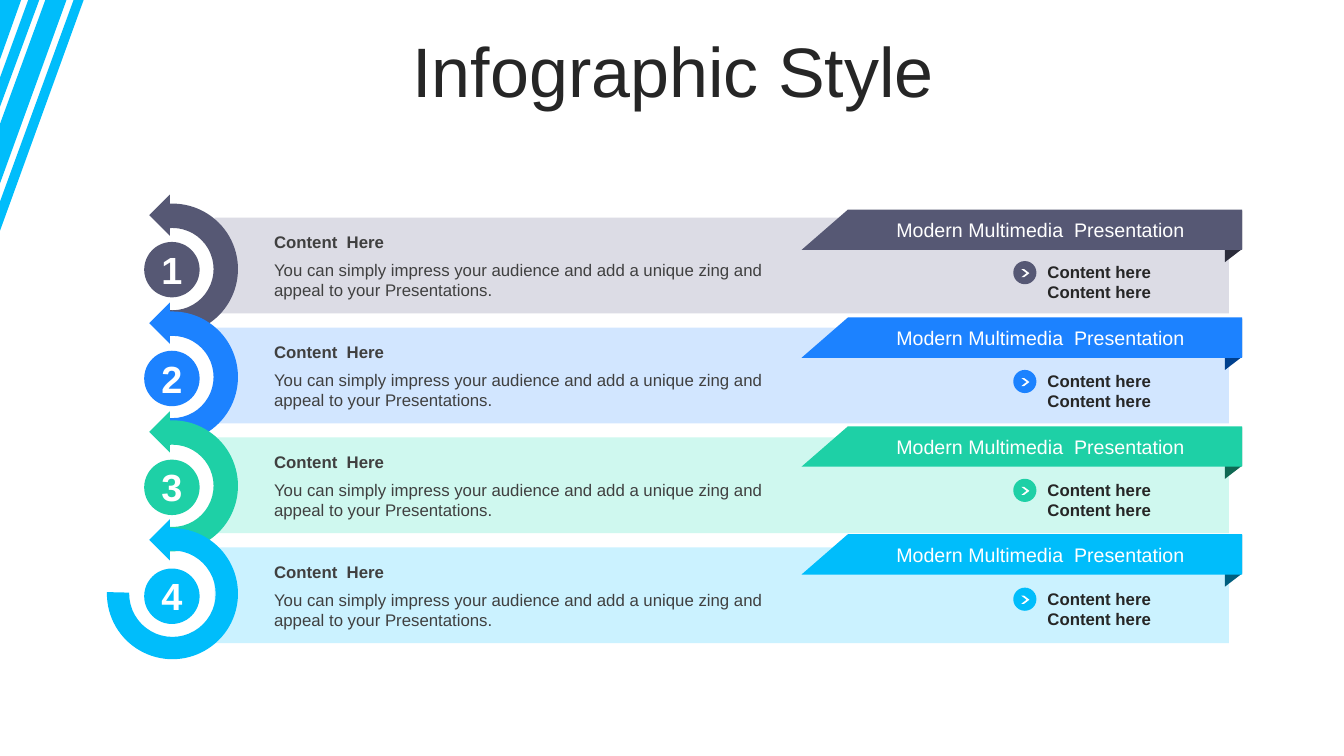
from pptx import Presentation
from pptx.dml.color import RGBColor
from pptx.enum.shapes import MSO_SHAPE
from pptx.enum.text import MSO_ANCHOR, MSO_AUTO_SIZE, PP_ALIGN
from pptx.util import Pt

PX = 9144  # 100 px to the inch
FONT = "Arial"
RECT, OVAL, ARC = MSO_SHAPE.RECTANGLE, MSO_SHAPE.OVAL, MSO_SHAPE.BLOCK_ARC
TRIANGLE, CHEVRON = MSO_SHAPE.RIGHT_TRIANGLE, MSO_SHAPE.CHEVRON
TOP, MIDDLE = MSO_ANCHOR.TOP, MSO_ANCHOR.MIDDLE
LEFT, CENTER = PP_ALIGN.LEFT, PP_ALIGN.CENTER

WHITE, INK, GREY, ACCENT = "FFFFFF", "262626", "404040", "00BDFB"
TITLE = "Infographic Style"
HEADING = "Content  Here"
BODY = ("You can simply impress your audience and add a unique zing "
        "and appeal to your Presentations.")
RIBBON = "Modern Multimedia  Presentation"
BULLETS = ["Content here", "Content here"]

# main colour, band colour, ribbon fold colour
ROWS = [
    ("565874", "DCDCE5", "2B2C3A"),
    ("1C82FF", "D2E6FF", "00408E"),
    ("1ED0A6", "CFF8EF", "0F6853"),
    (ACCENT, "CBF2FF", "005E7E"),
]
OPEN_ARC = (104.732, 2.031, 0.186)
LAST_ARC = (104.732, 54.833, 0.17)

# Each layer of a row repeats at its own distance.
BAND_STEP, BADGE_STEP, RIBBON_STEP = 109, 108, 107.4

STRIPES = [
    [(73, 0), (83, 0), (0, 229), (0, 200)],
    [(39, 0), (0, 106), (0, 77), (28, 0)],
    [(66, 0), (0, 182), (0, 123), (45, 0)],
    [(0, 0), (21, 0), (0, 59)],
]


def color(hex_code):
    return RGBColor.from_string(hex_code)


def emu(*lengths):
    return [round(length) * PX for length in lengths]


def paint(shape, fill):
    shape.shadow.inherit = False
    shape.fill.solid()
    shape.fill.fore_color.rgb = color(fill)
    shape.line.fill.background()


def add_preset(slide, kind, box, fill, rotation=0, adjustments=()):
    shape = slide.shapes.add_shape(kind, *emu(*box))
    shape.rotation = rotation
    for index, value in enumerate(adjustments):
        shape.adjustments[index] = value
    paint(shape, fill)


def add_outline(slide, contours, fill):
    """Draw closed contours, given in slide px, as one filled shape."""
    builder = slide.shapes.build_freeform(*contours[0][0], scale=PX)
    for number, (start, *rest) in enumerate(contours):
        if number:
            builder.move_to(*start)
        builder.add_line_segments(rest, close=True)
    paint(builder.convert_to_shape(), fill)


def write(frame, lines, size, ink, bold=False, align=LEFT, anchor=TOP):
    frame.word_wrap = True
    frame.auto_size = MSO_AUTO_SIZE.NONE
    frame.vertical_anchor = anchor
    frame.text = "\n".join(lines)
    for paragraph in frame.paragraphs:
        paragraph.alignment = align
        paragraph.font.name = FONT
        paragraph.font.size = Pt(size)
        paragraph.font.bold = bold
        paragraph.font.color.rgb = color(ink)


def add_text(slide, box, lines, *style, **options):
    write(slide.shapes.add_textbox(*emu(*box)).text_frame, lines, *style, **options)


def add_title(slide):
    title = slide.shapes.title
    title.left, title.top, title.width, title.height = emu(35, 37, 1266, 79)
    write(title.text_frame, [TITLE], 50, INK, align=CENTER, anchor=MIDDLE)
    paragraph = title.text_frame.paragraphs[0]
    paragraph.line_spacing = 0.8
    paragraph.space_before = Pt(10)


def add_badge(slide, index, main):
    y = 240 + index * BADGE_STEP
    add_preset(slide, OVAL, (143, y, 55, 55), main)
    add_text(slide, (148, y - 1, 45, 56), [str(index + 1)], 27, WHITE,
             bold=True, align=CENTER, anchor=MIDDLE)
    arc_y = 202 + index * RIBBON_STEP
    arc = LAST_ARC if index == len(ROWS) - 1 else OPEN_ARC
    add_preset(slide, ARC, (106, arc_y, 130, 130), main, 90, arc)
    add_preset(slide, TRIANGLE, (154, arc_y - 3, 29, 29), main, 45)


def add_message(slide, index):
    y = 225 + index * BAND_STEP
    add_text(slide, (262, y, 533, 30), [HEADING], 12, GREY, bold=True)
    add_text(slide, (262, y + 28, 525, 50), [BODY], 12, GREY)


def add_ribbon(slide, index, main, fold):
    y = round(208 + index * RIBBON_STEP)
    add_outline(slide, [[(1215, y + 2), (1232, y + 1), (1232, y + 39), (1215, y + 52)]], fold)
    add_outline(slide, [[(1232, y), (841, y), (795, y + 40), (1232, y + 40)]], main)
    add_text(slide, (873, y + 3, 318, 34), [RIBBON], 14, WHITE,
             align=CENTER, anchor=MIDDLE)


def add_bullets(slide, index, main):
    y = 259 + index * BADGE_STEP
    add_preset(slide, OVAL, (1005, y, 23, 23), main)
    add_preset(slide, CHEVRON, (1013, y + 8, 8, 8), WHITE, adjustments=(0.652,))
    add_text(slide, (1029, y - 4, 138, 50), BULLETS, 12, INK, bold=True, anchor=MIDDLE)


def main():
    deck = Presentation()
    deck.slide_width, deck.slide_height = emu(1333, 750)
    slide = deck.slides.add_slide(deck.slide_layouts[5])
    add_outline(slide, STRIPES, ACCENT)
    add_title(slide)
    for index, (_, band, _) in enumerate(ROWS):
        add_preset(slide, RECT, (213, 216 + index * BAND_STEP, 1006, 95), band)
    for index, (main_color, _, fold) in enumerate(ROWS):
        add_badge(slide, index, main_color)
        add_message(slide, index)
        add_ribbon(slide, index, main_color, fold)
        add_bullets(slide, index, main_color)
    deck.save("out.pptx")


if __name__ == "__main__":
    main()
